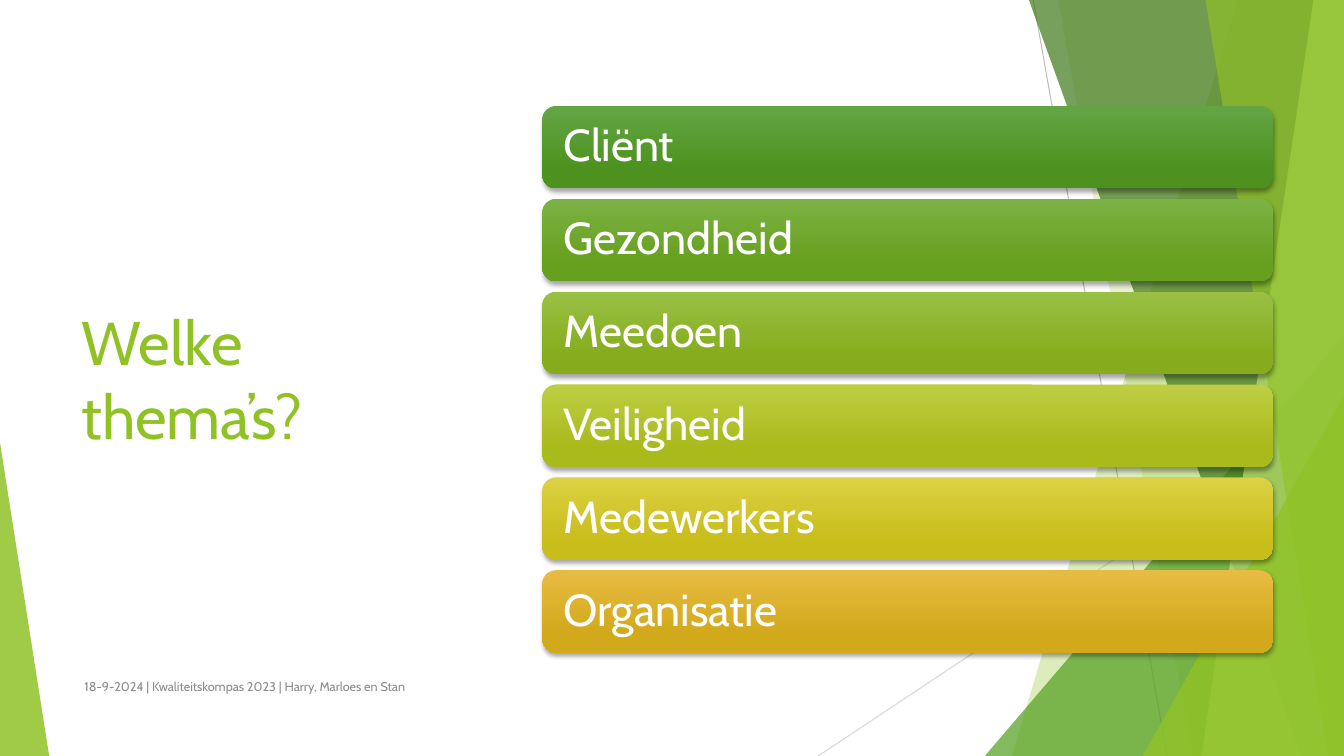
from dataclasses import dataclass

import lxml.etree
import pptx
import pptx.dml.color
import pptx.enum.dml
import pptx.enum.shapes
import pptx.enum.text
import pptx.oxml.ns
import pptx.util

Cm = pptx.util.Cm
SLIDE_W, SLIDE_H = 33.87, 19.05


@dataclass(frozen=True)
class Theme:
    font: str = "Cabin"
    title_size: int = 44
    bar_size: int = 32
    footer_size: int = 9
    lime: str = "90C226"
    green: str = "54A021"
    forest: str = "3F7819"
    pale: str = "C0E474"
    white: str = "FFFFFF"
    footer: str = "8C8C8C"
    steep_line: str = "BFBFBF"
    flat_line: str = "D9D9D9"
    shadow: str = "000000"
    # Top and bottom colour of each bar
    bars: tuple = (("63A545", "4D921E"), ("7BB244", "679F1E"),
                   ("99C044", "86AC1D"), ("BDCE43", "A9BA1B"),
                   ("DCD143", "C8BD1A"), ("E7BC43", "D2A91B"))


def rgb(colour):
    return pptx.dml.color.RGBColor.from_string(colour)


def add_xml(parent, tag, **attributes):
    return lxml.etree.SubElement(parent, pptx.oxml.ns.qn(tag), attributes)


class ThemeSlide:
    def __init__(self, slide, theme):
        self.slide = slide
        self.shapes = slide.shapes
        self.theme = theme

    def line(self, x1, y1, x2, y2, colour):
        ray = self.shapes.add_connector(
            pptx.enum.shapes.MSO_CONNECTOR.STRAIGHT,
            Cm(x1), Cm(y1), Cm(x2), Cm(y2))
        ray.line.color.rgb = rgb(colour)
        ray.line.width = pptx.util.Pt(0.75)
        add_xml(ray._element.spPr, "a:effectLst")

    def paint(self, shape, colour, opacity):
        shape.shadow.inherit = False
        shape.line.fill.background()
        shape.fill.solid()
        shape.fill.fore_color.rgb = rgb(colour)
        srgb = shape._element.spPr.find(".//" + pptx.oxml.ns.qn("a:srgbClr"))
        add_xml(srgb, "a:alpha", val=str(opacity * 1000))

    def facet(self, top_x, bottom_x, colour, opacity):
        """Full-height panel from a slanted left side to the slide's right edge."""
        outline = self.shapes.build_freeform(Cm(top_x), 0)
        outline.add_line_segments([
            (Cm(SLIDE_W), 0), (Cm(SLIDE_W), Cm(SLIDE_H)),
            (Cm(bottom_x), Cm(SLIDE_H))])
        self.paint(outline.convert_to_shape(), colour, opacity)

    def corner(self, left, top, width, apex, colour, opacity):
        """Triangle standing on the bottom edge of the slide."""
        triangle = self.shapes.add_shape(
            pptx.enum.shapes.MSO_SHAPE.ISOSCELES_TRIANGLE,
            Cm(left), Cm(top), Cm(width), Cm(SLIDE_H - top))
        triangle.adjustments[0] = apex
        self.paint(triangle, colour, opacity)

    def set_text(self, shape, text, size, colour):
        frame = shape.text_frame
        frame.word_wrap = True
        frame.vertical_anchor = pptx.enum.text.MSO_ANCHOR.MIDDLE
        paragraph = frame.paragraphs[0]
        paragraph.text = text
        paragraph.alignment = pptx.enum.text.PP_ALIGN.LEFT
        paragraph.font.name = self.theme.font
        paragraph.font.size = pptx.util.Pt(size)
        paragraph.font.color.rgb = rgb(colour)
        return paragraph

    def text(self, left, top, width, height, text, size, colour):
        box = self.shapes.add_textbox(Cm(left), Cm(top), Cm(width), Cm(height))
        self.set_text(box, text, size, colour)

    def bar(self, left, top, width, height, text, colours):
        bar = self.shapes.add_shape(
            pptx.enum.shapes.MSO_SHAPE.ROUNDED_RECTANGLE,
            Cm(left), Cm(top), Cm(width), Cm(height))
        bar.line.fill.background()
        bar.fill.gradient()
        bar.fill.gradient_angle = 270
        stops = zip(bar.fill.gradient_stops, colours, (0, 0.78))
        for stop, colour, position in stops:
            stop.color.rgb = rgb(colour)
            stop.position = position

        # Soft shadow below the bar
        bar.shadow.inherit = False
        effects = bar._element.spPr.find(pptx.oxml.ns.qn("a:effectLst"))
        shadow = add_xml(effects, "a:outerShdw", blurRad=str(pptx.util.Pt(3)),
                         dist=str(pptx.util.Pt(2)), dir="5400000",
                         rotWithShape="0")
        tint = add_xml(shadow, "a:srgbClr", val=self.theme.shadow)
        add_xml(tint, "a:alpha", val="35000")

        bar.text_frame.margin_left = bar.text_frame.margin_right = Cm(0.43)
        label = self.set_text(bar, text, self.theme.bar_size, self.theme.white)
        label.line_spacing = 0.9


def main():
    deck = pptx.Presentation()
    deck.slide_width, deck.slide_height = Cm(SLIDE_W), Cm(SLIDE_H)
    theme = Theme()
    page = ThemeSlide(deck.slides.add_slide(deck.slide_layouts[6]), theme)

    # Background lines and translucent facets, back to front
    page.line(26.04, 0, 29.41, SLIDE_H, theme.steep_line)
    page.line(SLIDE_W, 10.24, 20.62, SLIDE_H, theme.flat_line)
    page.facet(31.19, 25.5, theme.lime, 30)
    page.facet(26.67, 30.05, theme.lime, 20)
    page.corner(24.82, 8.46, 9.05, 1, theme.green, 72)
    page.facet(25.93, 32.79, theme.forest, 70)
    page.facet(33.1, 30.28, theme.pale, 70)
    page.facet(30.38, 33.48, theme.lime, 65)
    page.corner(28.8, 9.98, 5.07, 1, theme.lime, 80)
    page.corner(0, 11.15, 1.24, 0, theme.lime, 85)

    # Title and footer
    page.text(1.8, 3.84, 9.86, 11.38, "Welke thema’s?",
              theme.title_size, theme.lime)
    page.text(1.88, 16.79, 17.5, 1.02,
              "18-9-2024 | Kwaliteitskompas 2023 | Harry, Marloes en Stan",
              theme.footer_size, theme.footer)

    # One bar per theme
    topics = ("Cliënt", "Gezondheid", "Meedoen", "Veiligheid",
              "Medewerkers", "Organisatie")
    first_top, pitch = 2.67, 2.34
    for row, (topic, colours) in enumerate(zip(topics, theme.bars)):
        page.bar(13.67, first_top + row * pitch, 18.42, 2.08, topic, colours)

    deck.save("out.pptx")


if __name__ == "__main__":
    main()
